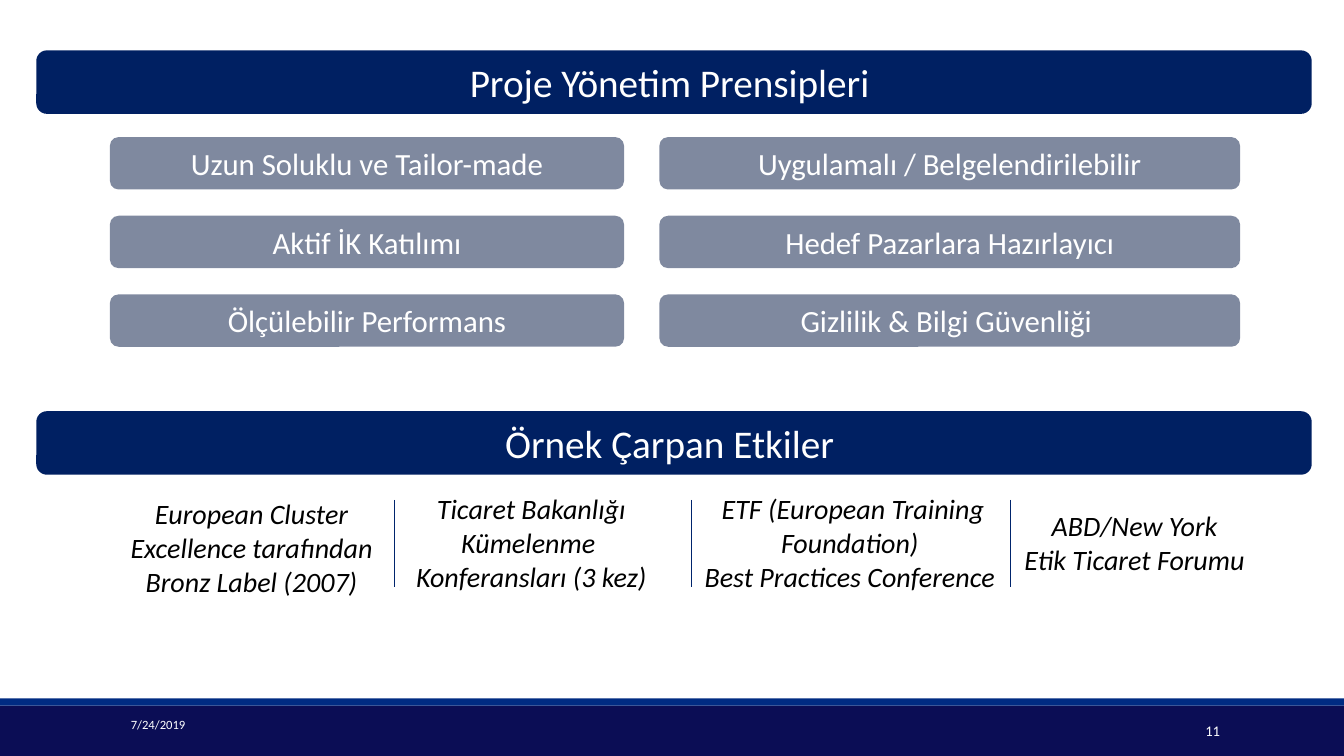
from dataclasses import dataclass

from lxml import etree
from pptx import Presentation
from pptx.dml.color import RGBColor
from pptx.enum.shapes import MSO_CONNECTOR, MSO_SHAPE
from pptx.enum.text import MSO_ANCHOR, MSO_AUTO_SIZE, PP_ALIGN
from pptx.oxml.ns import qn
from pptx.util import Inches, Pt

RECT = MSO_SHAPE.RECTANGLE
ROUND = MSO_SHAPE.ROUNDED_RECTANGLE
STRAIGHT = MSO_CONNECTOR.STRAIGHT
TOP, MIDDLE = MSO_ANCHOR.TOP, MSO_ANCHOR.MIDDLE
LEFT, CENTER, RIGHT = PP_ALIGN.LEFT, PP_ALIGN.CENTER, PP_ALIGN.RIGHT
GROW = MSO_AUTO_SIZE.SHAPE_TO_FIT_TEXT
FONT = "Calibri"
WHITE, BLACK = "FFFFFF", "000000"
NAVY, SLATE, RULE = "002062", "001541", "00246C"


@dataclass
class Box:
    left: float
    top: float
    width: float
    height: float


@dataclass
class Style:
    size: float
    color: str = WHITE
    italic: bool = False
    align: int = CENTER
    gap: float = 0


@dataclass
class Column:
    left: float
    width: float
    labels: list[str]


@dataclass
class Effect:
    box: Box
    lines: list[str]


HEAD = Style(28, gap=3)
LABEL = Style(22, gap=3)
CAPTION = Style(20, BLACK, italic=True)

HEADINGS = [(0.5, "Proje Yönetim Prensipleri "), (4.08, "Örnek Çarpan Etkiler ")]
COLUMNS = [
    Column(1.09, 5.1, ["Uzun Soluklu ve Tailor-made", "Aktif İK Katılımı",
                       "Ölçülebilir Performans"]),
    Column(6.54, 5.76, ["Uygulamalı / Belgelendirilebilir",
                        "Hedef Pazarlara Hazırlayıcı",
                        "Gizlilik & Bilgi Güvenliği "]),
]
EFFECTS = [
    Effect(Box(1.09, 4.88, 2.81, 1.11),
           ["European Cluster Excellence tarafından", "Bronz Label (2007)"]),
    Effect(Box(3.69, 4.83, 3.16, 1.11),
           ["Ticaret Bakanlığı", "Kümelenme ", "Konferansları (3 kez)"]),
    Effect(Box(6.88, 4.83, 3.16, 1.11),
           ["ETF (European Training Foundation) ", "Best Practices Conference "]),
    Effect(Box(10.02, 5, 2.53, 0.77), ["ABD/New York ", "Etik Ticaret Forumu "]),
]
RULES = [3.91, 6.86, 10.02]
FOOTER = [
    (Box(1.2, 6.99, 2.7, 0.4), "7/24/2019", Style(9, align=LEFT)),
    (Box(10.77, 7.05, 1.43, 0.4), "11", Style(10.5, align=RIGHT)),
]


def rgb(code: str) -> RGBColor:
    return RGBColor.from_string(code)


def place(box: Box) -> list[int]:
    return [Inches(n) for n in (box.left, box.top, box.width, box.height)]


def write(shape, lines: list[str], style: Style, anchor: int = TOP) -> None:
    frame = shape.text_frame
    frame.word_wrap = True
    frame.vertical_anchor = anchor
    frame.text = "\n".join(lines)
    for par in frame.paragraphs:
        par.alignment = style.align
        par.space_before = par.space_after = Pt(style.gap)
        font = par.font
        font.name, font.size, font.italic = FONT, Pt(style.size), style.italic
        font.color.rgb = rgb(style.color)


def block(slide, kind: int, box: Box, fill: str | None = None, alpha: int = 100):
    shape = slide.shapes.add_shape(kind, *place(box))
    shape.shadow.inherit = False
    shape.line.fill.background()
    if fill is None:
        shape.fill.background()
        return shape
    shape.fill.solid()
    shape.fill.fore_color.rgb = rgb(fill)
    if alpha < 100:
        tone = shape.fill._xPr.find(".//" + qn("a:srgbClr"))
        etree.SubElement(tone, qn("a:alpha"), val=str(alpha * 1000))
    return shape


def panel(slide, box: Box, text: str, style: Style, fill: str, alpha: int = 100) -> None:
    shape = block(slide, ROUND, box, fill, alpha)
    write(shape, [text], style)
    shape.text_frame.auto_size = GROW


def caption(slide, effect: Effect) -> None:
    shape = block(slide, ROUND, effect.box)
    shape.adjustments[0] = 0
    write(shape, effect.lines, CAPTION)
    shape.text_frame.auto_size = GROW


def rule(slide, left: float) -> None:
    line = slide.shapes.add_connector(
        STRAIGHT, Inches(left), Inches(4.96), Inches(left), Inches(5.82))
    line.line.color.rgb = rgb(RULE)
    line.line.width = Pt(1)
    etree.SubElement(line._element.spPr, qn("a:effectLst"))


def main() -> None:
    deck = Presentation()
    deck.slide_width, deck.slide_height = Inches(13.33), Inches(7.5)
    slide = deck.slides.add_slide(deck.slide_layouts[6])

    # Footer bars, date and page number
    block(slide, RECT, Box(0, 7, 13.33, 0.5), "0B0D55")
    block(slide, RECT, Box(0, 6.93, 13.33, 0.07), "002B82")
    for box, text, style in FOOTER:
        write(slide.shapes.add_textbox(*place(box)), [text], style, MIDDLE)

    # Section headings
    for top, text in HEADINGS:
        panel(slide, Box(0.36, top, 12.65, 0.63), text, HEAD, NAVY)

    # Grid of principles
    for col in COLUMNS:
        for row, text in enumerate(col.labels):
            box = Box(col.left, 1.36 + row * 0.78, col.width, 0.52)
            panel(slide, box, text, LABEL, SLATE, 50)

    # Effects and the rules between them
    for effect in EFFECTS:
        caption(slide, effect)
    for left in RULES:
        rule(slide, left)

    deck.save("out.pptx")


if __name__ == "__main__":
    main()
